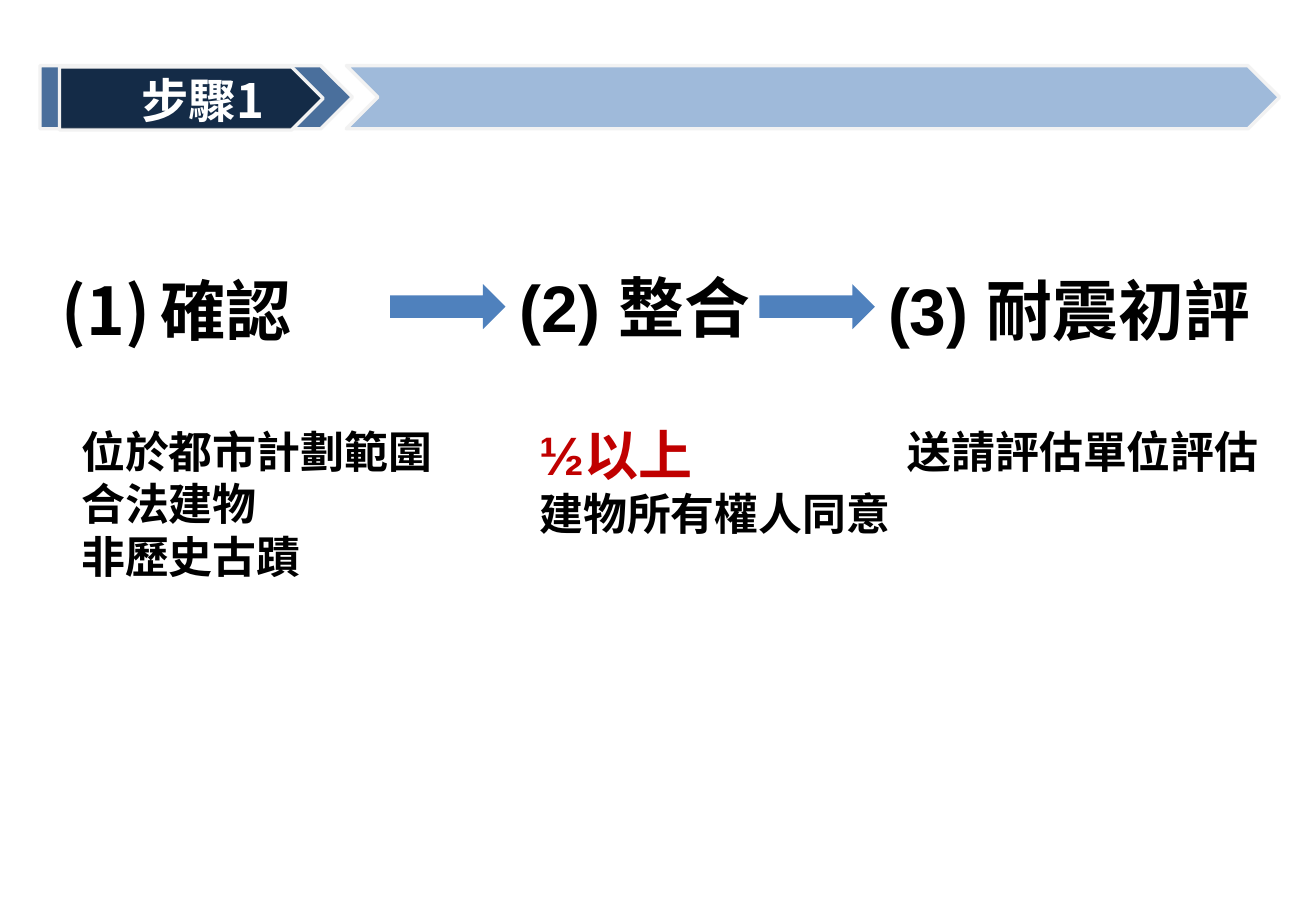
from lxml import etree
from pptx import Presentation
from pptx.dml.color import RGBColor
from pptx.enum.shapes import MSO_SHAPE
from pptx.enum.text import MSO_ANCHOR, MSO_AUTO_SIZE, PP_ALIGN
from pptx.oxml.ns import qn
from pptx.util import Pt

PX = 9144  # EMU: 100 px to the inch

BLACK = RGBColor(0x00, 0x00, 0x00)
WHITE = RGBColor(0xFF, 0xFF, 0xFF)
RED = RGBColor(0xC0, 0x00, 0x00)
ARROW_BLUE = RGBColor(0x4F, 0x81, 0xBD)
STEEL = RGBColor(0x37, 0x60, 0x92)
PALE_BLUE = RGBColor(0x95, 0xB3, 0xD7)
NAVY = RGBColor(0x0F, 0x24, 0x3E)
EDGE = RGBColor(0xF2, 0xF2, 0xF2)

ARROW = MSO_SHAPE.RIGHT_ARROW
PLATE = MSO_SHAPE.PENTAGON
CHEVRON = MSO_SHAPE.CHEVRON
MIDDLE = MSO_ANCHOR.MIDDLE
FIT_TEXT = MSO_AUTO_SIZE.SHAPE_TO_FIT_TEXT
CENTER = PP_ALIGN.CENTER

HEADING_SIZE, EMPHASIS_SIZE, DETAIL_SIZE = 39, 32, 26
HEADING_GAP = 45
DETAIL_INDENT = 16
NUMBER_INDENT = 81


class StepSlide:
    body_font = "Arial"
    label_font = "Noto Sans CJK SC"

    def __init__(self, deck):
        self.slide = deck.slides.add_slide(deck.slide_layouts[6])

    def shape(self, kind, box, fill, edge=None):
        """Add a filled shape; an edged one is also slightly see-through."""
        shape = self.slide.shapes.add_shape(kind, *(n * PX for n in box))
        shape.shadow.inherit = False
        shape.fill.solid()
        shape.fill.fore_color.rgb = fill
        if edge is None:
            shape.line.fill.background()
        else:
            shape.line.color.rgb = edge
            shape.line.width = Pt(2)
            color = shape._element.spPr.find(qn("a:solidFill"))[0]
            etree.SubElement(color, qn("a:alpha")).set("val", "90000")

    def text_frame(self, box):
        frame = self.slide.shapes.add_textbox(*(n * PX for n in box)).text_frame
        frame.word_wrap = True
        frame.auto_size = FIT_TEXT
        return frame

    def set_text(self, paragraph, text, size, color=BLACK, font=body_font):
        paragraph.text = text
        paragraph.font.name = font
        paragraph.font.size = Pt(size)
        paragraph.font.bold = True
        paragraph.font.color.rgb = color

    def column(self, box, heading, details, numbered=False):
        frame = self.text_frame(box)
        title = frame.paragraphs[0]
        title.space_after = Pt(HEADING_GAP)
        if numbered:
            props = title._p.get_or_add_pPr()
            props.set("marL", str(NUMBER_INDENT * PX))
            props.set("indent", str(-NUMBER_INDENT * PX))
            number = etree.SubElement(props, qn("a:buAutoNum"))
            number.set("type", "arabicParenBoth")
        self.set_text(title, heading, HEADING_SIZE)
        for text, size, color in details:
            detail = frame.add_paragraph()
            detail._p.get_or_add_pPr().set("marL", str(DETAIL_INDENT * PX))
            self.set_text(detail, text, size, color)

    def label(self, box, text):
        frame = self.text_frame(box)
        frame.vertical_anchor = MIDDLE
        frame.margin_left = frame.margin_right = 0
        frame.margin_top, frame.margin_bottom = 6 * PX, 5 * PX
        frame.paragraphs[0].alignment = CENTER
        self.set_text(frame.paragraphs[0], text, 28, WHITE, self.label_font)


def main():
    deck = Presentation()
    deck.slide_width, deck.slide_height = 1083 * PX, 750 * PX
    step = StepSlide(deck)

    step.column((41, 217, 336, 338), "確認", [
        (text, DETAIL_SIZE, BLACK)
        for text in ("位於都市計劃範圍", "合法建物", "非歷史古蹟")
    ], numbered=True)
    step.column((418, 215, 363, 370), "(2) 整合", [
        ("½以上", EMPHASIS_SIZE, RED),
        ("建物所有權人同意", DETAIL_SIZE, BLACK),
    ])
    step.column((721, 217, 332, 185), "(3) 耐震初評", [
        ("送請評估單位評估", DETAIL_SIZE, BLACK),
    ])
    for left in (321, 625):
        step.shape(ARROW, (left, 234, 95, 37), ARROW_BLUE)

    step.shape(PLATE, (33, 54, 257, 52), STEEL, EDGE)
    step.shape(CHEVRON, (285, 54, 768, 52), PALE_BLUE, EDGE)
    step.shape(PLATE, (49, 55, 217, 52), NAVY, EDGE)
    step.label((68, 52, 198, 59), "步驟1")

    deck.save("out.pptx")


if __name__ == "__main__":
    main()
